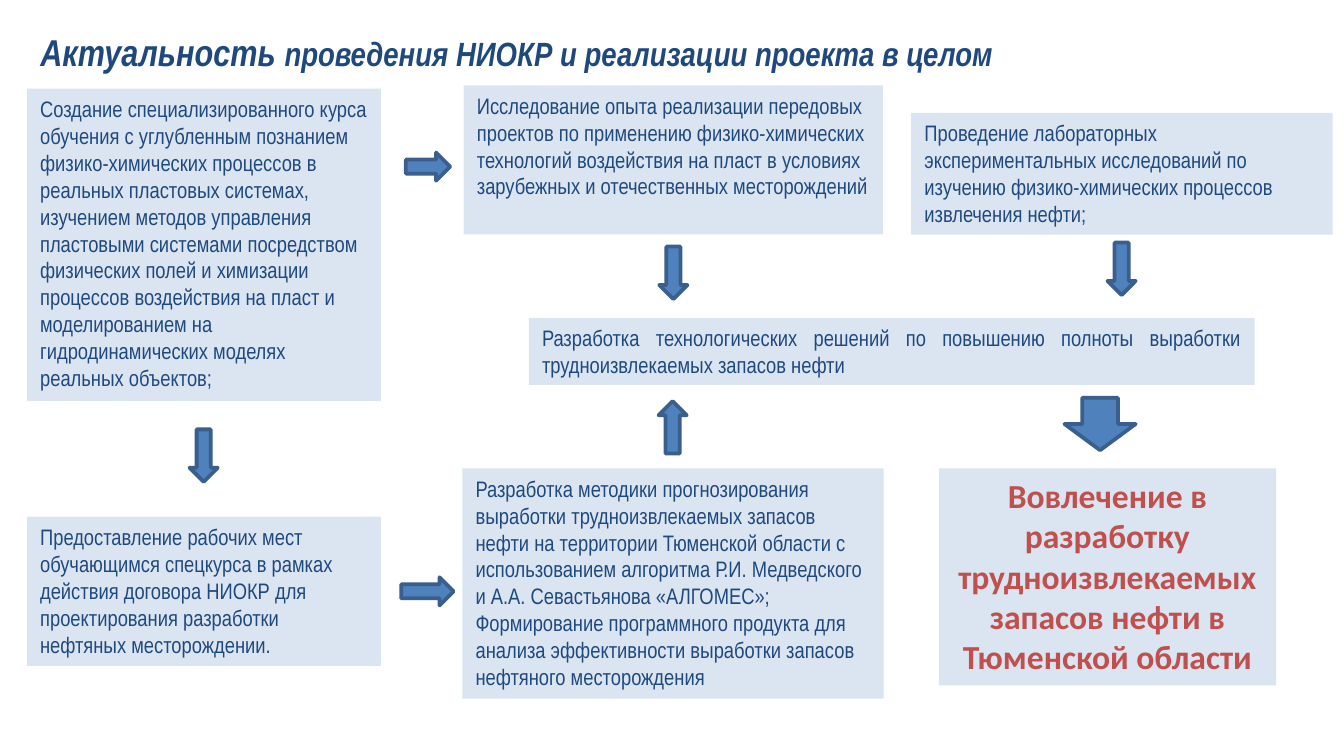
"""Build the slide on the relevance of the R&D project as a flow of boxes and arrows."""

from dataclasses import dataclass

from lxml.etree import SubElement
from pptx import Presentation
from pptx.dml.color import RGBColor
from pptx.enum.shapes import MSO_SHAPE
from pptx.enum.text import MSO_ANCHOR, MSO_AUTO_SIZE, PP_ALIGN
from pptx.oxml.ns import qn
from pptx.util import Emu, Pt

PX = 4572
NAVY = RGBColor(0x1F, 0x49, 0x7D)
BLUE = RGBColor(0x4F, 0x81, 0xBD)
DARK_BLUE = RGBColor(0x3A, 0x5F, 0x8C)
RED = RGBColor(0xC0, 0x50, 0x4D)
NARROW = "Arial Narrow"
TITLE_ONLY = 5


@dataclass(frozen=True)
class Box:
    left: int
    top: int
    width: int
    height: int
    text: str
    align: PP_ALIGN = PP_ALIGN.LEFT
    size: int = 12
    font: str = NARROW
    color: RGBColor = NAVY
    bold: bool = False


@dataclass(frozen=True)
class Arrow:
    left: int
    top: int
    rotation: int = 0
    width: int = 78
    height: int = 42


BOXES = (
    Box(40, 132, 527, 465,
        "Создание специализированного курса обучения с углубленным познанием "
        "физико-химических процессов в реальных пластовых системах, изучением методов "
        "управления пластовыми системами посредством физических полей и химизации "
        "процессов воздействия на пласт и моделированием на гидродинамических моделях "
        "реальных объектов;"),
    Box(690, 127, 624, 222,
        "Исследование опыта реализации передовых проектов по применению "
        "физико-химических технологий воздействия на пласт в условиях зарубежных и "
        "отечественных месторождений"),
    Box(1356, 168, 627, 181,
        "Проведение лабораторных экспериментальных исследований по изучению "
        "физико-химических процессов извлечения нефти;"),
    Box(787, 473, 1080, 100,
        "Разработка технологических решений по повышению полноты выработки "
        "трудноизвлекаемых запасов нефти", align=PP_ALIGN.JUSTIFY),
    Box(40, 769, 527, 222,
        "Предоставление рабочих мест обучающимся спецкурса в рамках действия договора "
        "НИОКР для проектирования разработки нефтяных месторождении."),
    Box(688, 697, 627, 343,
        "Разработка методики прогнозирования выработки трудноизвлекаемых запасов нефти "
        "на территории Тюменской области с использованием алгоритма Р.И. Медведского и "
        "А.А. Севастьянова «АЛГОМЕС»; Формирование программного продукта для анализа "
        "эффективности выработки запасов нефтяного месторождения"),
    Box(1397, 697, 502, 323,
        "Вовлечение в разработку трудноизвлекаемых запасов нефти в Тюменской области",
        align=PP_ALIGN.CENTER, size=18, font="Calibri", color=RED, bold=True),
)

ARROWS = (
    Arrow(604, 227, width=66),
    Arrow(597, 859),
    Arrow(264, 657, rotation=90),
    Arrow(963, 385, rotation=90),
    Arrow(1630, 379, rotation=90),
    Arrow(962, 615, rotation=270),
    Arrow(1598, 578, rotation=90, height=106),
)


def px(length: int) -> Emu:
    """Turn whole pixels into EMU."""
    return Emu(length * PX)


def add_text(paragraph, text: str, *, size: int, font: str = NARROW,
             color: RGBColor = NAVY, bold: bool = False, italic: bool = False) -> None:
    """Append a formatted run to a paragraph."""
    run = paragraph.add_run()
    run.text = text
    run.font.name = font
    run.font.size = Pt(size)
    run.font.color.rgb = color
    run.font.bold = bold
    run.font.italic = italic


def prepare_frame(text_frame, align: PP_ALIGN):
    """Set wrapping, growth and alignment, and return the first paragraph."""
    text_frame.word_wrap = True
    text_frame.auto_size = MSO_AUTO_SIZE.SHAPE_TO_FIT_TEXT
    text_frame.vertical_anchor = MSO_ANCHOR.TOP
    paragraph = text_frame.paragraphs[0]
    paragraph.alignment = align
    return paragraph


def add_filled_shape(slide, kind: MSO_SHAPE, item: Box | Arrow):
    """Add a blue shape without shadow at the place of the item."""
    shape = slide.shapes.add_shape(
        kind, px(item.left), px(item.top), px(item.width), px(item.height))
    shape.shadow.inherit = False
    shape.fill.solid()
    shape.fill.fore_color.rgb = BLUE
    return shape


def add_title(slide) -> None:
    """Place and fill the title placeholder."""
    title = slide.shapes.title
    title.left, title.top, title.width, title.height = map(px, (40, 33, 1494, 88))
    paragraph = prepare_frame(title.text_frame, PP_ALIGN.LEFT)
    add_text(paragraph, "Актуальность ", size=20, bold=True, italic=True)
    add_text(paragraph, "проведения НИОКР и реализации проекта в целом",
             size=18, bold=True, italic=True)


def add_box(slide, box: Box) -> None:
    """Draw a translucent box with its text."""
    shape = add_filled_shape(slide, MSO_SHAPE.RECTANGLE, box)
    shape.line.fill.background()
    color = shape.element.spPr.find(qn("a:solidFill"))[0]
    SubElement(color, qn("a:alpha"), val="20000")
    paragraph = prepare_frame(shape.text_frame, box.align)
    add_text(paragraph, box.text, size=box.size, font=box.font,
             color=box.color, bold=box.bold)


def add_arrow(slide, arrow: Arrow) -> None:
    """Draw a block arrow turned by its rotation."""
    shape = add_filled_shape(slide, MSO_SHAPE.RIGHT_ARROW, arrow)
    shape.rotation = arrow.rotation
    shape.line.color.rgb = DARK_BLUE
    shape.line.width = Pt(2)


def main() -> None:
    """Build and save the presentation."""
    presentation = Presentation()
    presentation.slide_width, presentation.slide_height = px(2000), px(1125)
    slide = presentation.slides.add_slide(presentation.slide_layouts[TITLE_ONLY])
    add_title(slide)
    for box in BOXES:
        add_box(slide, box)
    for arrow in ARROWS:
        add_arrow(slide, arrow)
    presentation.save("out.pptx")


if __name__ == "__main__":
    main()
